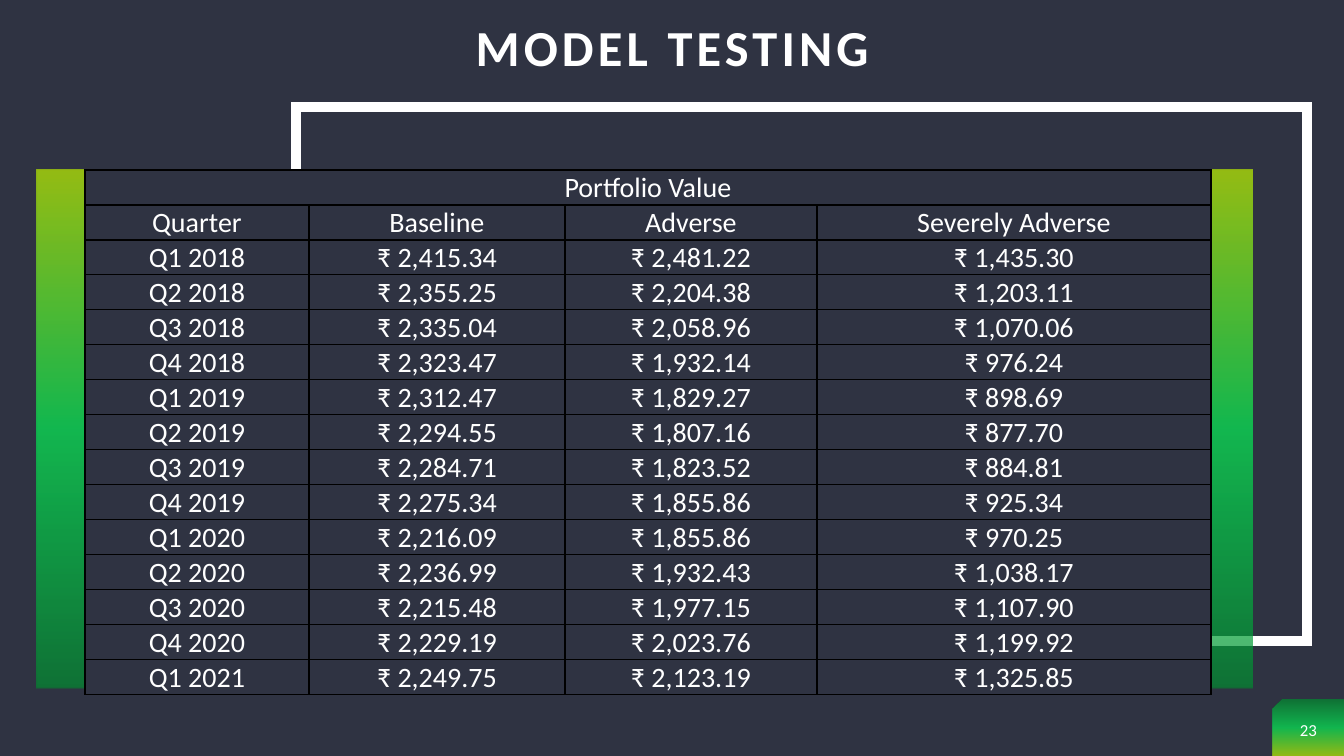
import pptx
import pptx.util
import pptx.dml.color
import pptx.enum.shapes
import pptx.enum.text
import pptx.oxml
import pptx.oxml.ns

TITLE = "MODEL TESTING"
PAGE = "23"
CAPTION = "Portfolio Value"
HEADS = ("Quarter", "Baseline", "Adverse", "Severely Adverse")
ROWS = [
    ("Q1 2018", "2,415.34", "2,481.22", "1,435.30"),
    ("Q2 2018", "2,355.25", "2,204.38", "1,203.11"),
    ("Q3 2018", "2,335.04", "2,058.96", "1,070.06"),
    ("Q4 2018", "2,323.47", "1,932.14", "976.24"),
    ("Q1 2019", "2,312.47", "1,829.27", "898.69"),
    ("Q2 2019", "2,294.55", "1,807.16", "877.70"),
    ("Q3 2019", "2,284.71", "1,823.52", "884.81"),
    ("Q4 2019", "2,275.34", "1,855.86", "925.34"),
    ("Q1 2020", "2,216.09", "1,855.86", "970.25"),
    ("Q2 2020", "2,236.99", "1,932.43", "1,038.17"),
    ("Q3 2020", "2,215.48", "1,977.15", "1,107.90"),
    ("Q4 2020", "2,229.19", "2,023.76", "1,199.92"),
    ("Q1 2021", "2,249.75", "2,123.19", "1,325.85"),
]
THEME = {
    "font": "Calibri", "back": "2F3342", "text": "FFFFFF", "rule": "000000",
    "grad": ((0, "038B30"), (50, "05EE55"), (100, "C0F400")), "alpha": 70,
    "title": 36, "body": 20, "page": 12, "frame": 7, "border": 1, "track": 3,
}
BOX = {
    "tab": (1273, 700, 71, 56),
    "title": (66, -15, 1213, 131),
    "frame": (296, 107, 1011, 534),
    "panel": (37, 170, 1216, 518),
    "page": (1273, 707, 71, 45),
}
LEFT, TOP, HIGH = 85, 170, 35
WIDTHS = (224, 256, 252, 394)

SHAPE = pptx.enum.shapes.MSO_SHAPE
ALIGN = pptx.enum.text.PP_ALIGN
ANCHOR = pptx.enum.text.MSO_ANCHOR
NS = pptx.oxml.ns.nsdecls("a")


def px(n):
    return round(n * 914400 / 100.8)


def place(name):
    return [px(n) for n in BOX[name]]


def tint(name):
    return pptx.dml.color.RGBColor.from_string(THEME[name])


def assign(item, **form):
    for key, val in form.items():
        setattr(item, key, val)


def write(frame, text, size, bold=False):
    para = frame.paragraphs[0]
    para.alignment = ALIGN.CENTER
    run = para.add_run()
    run.text = text
    assign(run.font, name=THEME["font"], size=pptx.util.Pt(THEME[size]), bold=bold)
    run.font.color.rgb = tint("text")
    return para, run


def label(slide, name, text, bold=False):
    frame = slide.shapes.add_textbox(*place(name)).text_frame
    assign(frame, word_wrap=True, vertical_anchor=ANCHOR.MIDDLE)
    return write(frame, text, name, bold)


def shape(slide, kind, name):
    item = slide.shapes.add_shape(kind, *place(name))
    item.shadow.inherit = False
    item._element.spPr.xfrm.set("flipH", "1")
    return item


def blend(item, angle):
    stops = "".join(
        f'<a:gs pos="{pos * 1000}"><a:srgbClr val="{tone}">'
        f'<a:alpha val="{THEME["alpha"] * 1000}"/></a:srgbClr></a:gs>'
        for pos, tone in THEME["grad"])
    item.line.fill.background()
    item._element.spPr.prstGeom.addnext(pptx.oxml.parse_xml(
        f'<a:gradFill {NS} rotWithShape="1"><a:gsLst>{stops}</a:gsLst>'
        f'<a:lin ang="{angle * 60000}" scaled="0"/></a:gradFill>'))


def border(cell):
    props = cell._tc.get_or_add_tcPr()
    for side in "LRTB":
        props.append(pptx.oxml.parse_xml(
            f'<a:ln{side} {NS} w="{THEME["border"] * 12700}"><a:solidFill>'
            f'<a:srgbClr val="{THEME["rule"]}"/></a:solidFill></a:ln{side}>'))


def grid(slide):
    money = [(row[0], *(f"₹ {val}" for val in row[1:])) for row in ROWS]
    lines = [(CAPTION, "", "", ""), HEADS, *money]
    table = slide.shapes.add_table(
        len(lines), len(WIDTHS), px(LEFT), px(TOP),
        px(sum(WIDTHS)), px(HIGH * len(lines))).table
    assign(table, first_row=False, horz_banding=False)
    for col, wide in zip(table.columns, WIDTHS):
        col.width = px(wide)
    for r, line in enumerate(lines):
        table.rows[r].height = px(HIGH)
        for c, text in enumerate(line):
            cell = table.cell(r, c)
            assign(cell, margin_left=px(1), margin_right=px(1), margin_top=px(1),
                   margin_bottom=0, vertical_anchor=ANCHOR.BOTTOM)
            border(cell)
            cell.fill.solid()
            cell.fill.fore_color.rgb = tint("back")
            if text:
                write(cell.text_frame, text, "body")
    table.cell(0, 0).merge(table.cell(0, len(WIDTHS) - 1))


def main():
    deck = pptx.Presentation()
    assign(deck, slide_width=px(1344), slide_height=px(756))
    slide = deck.slides.add_slide(deck.slide_layouts[6])
    slide.background.fill.solid()
    slide.background.fill.fore_color.rgb = tint("back")

    blend(shape(slide, SHAPE.SNIP_1_RECTANGLE, "tab"), 90)
    para, run = label(slide, "title", TITLE, True)
    para.line_spacing = 0.9
    run.font._element.set("spc", str(THEME["track"] * 100))

    frame = shape(slide, SHAPE.RECTANGLE, "frame")
    frame.fill.background()
    frame.line.color.rgb = tint("text")
    frame.line.width = pptx.util.Pt(THEME["frame"])
    frame.line._get_or_add_ln().append(
        pptx.oxml.parse_xml(f'<a:miter {NS} lim="800000"/>'))

    blend(shape(slide, SHAPE.RECTANGLE, "panel"), 270)
    label(slide, "page", PAGE)
    grid(slide)
    deck.save("out.pptx")


if __name__ == "__main__":
    main()
